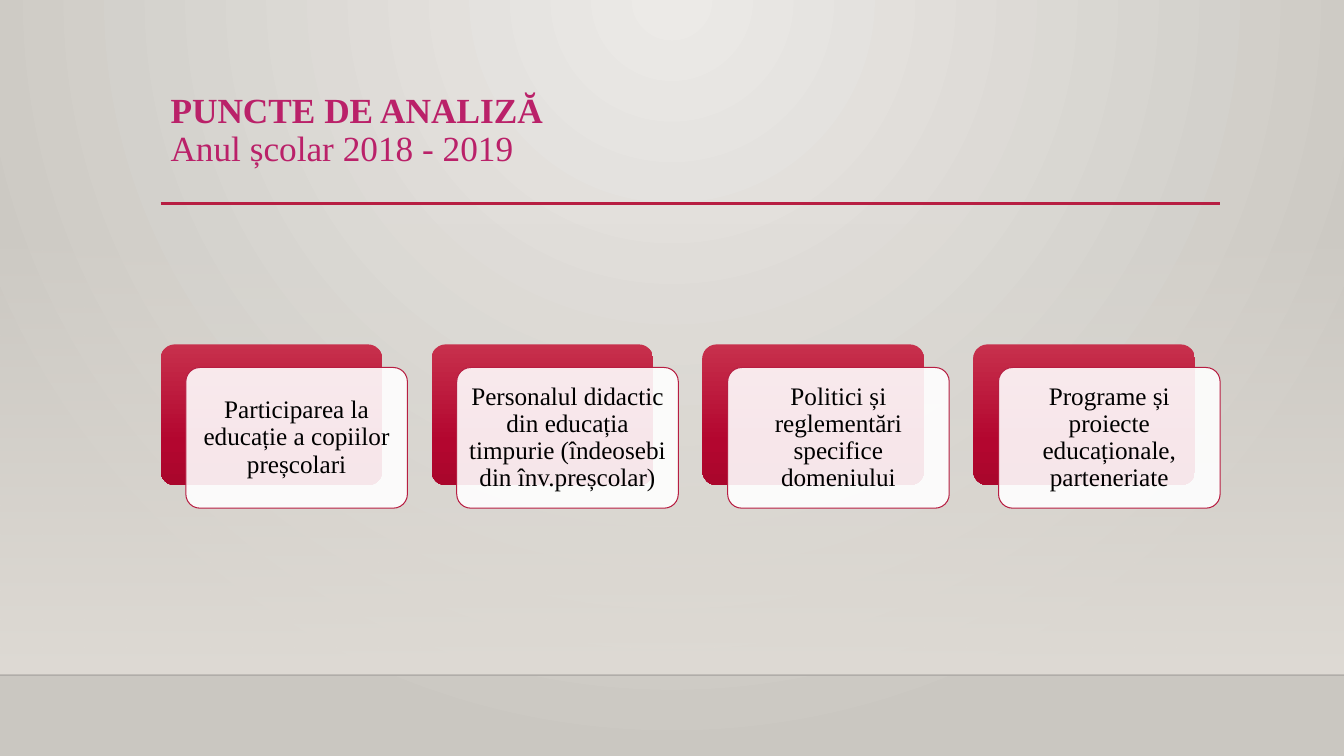
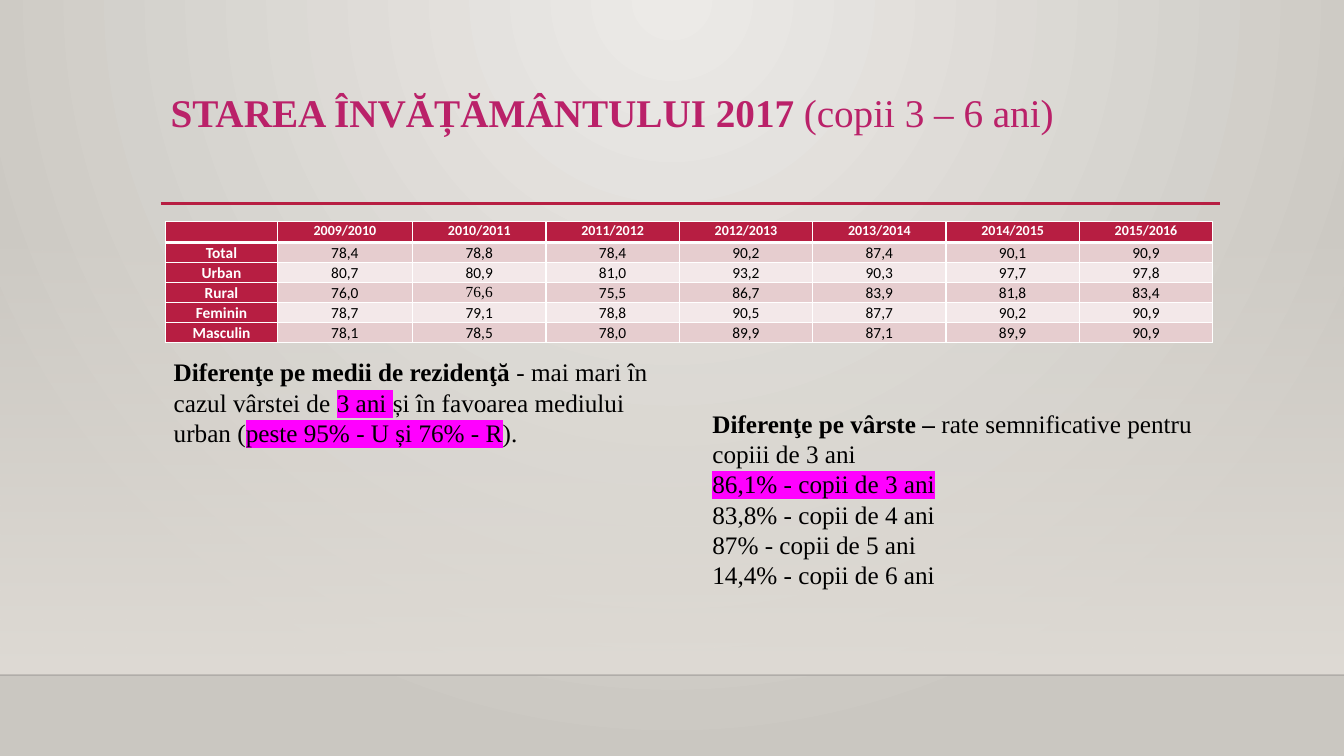
from dataclasses import dataclass

from lxml import etree
from pptx import Presentation
from pptx import util as u
from pptx.dml.color import RGBColor
from pptx.enum import shapes, text
from pptx.oxml.ns import qn

PX = 9525


@dataclass(frozen=True)
class Theme:
    serif: str = "Times New Roman"
    sans: str = "Calibri"
    ink: str = "000000"
    white: str = "FFFFFF"
    head: str = "BA2169"
    red: str = "B71E42"
    edge: str = "000001"
    mark: str = "FF00FF"
    bands: tuple = ("E6CDCF", "F3E8E9")
    back: tuple = ((0, "ECEAE7", 100), (100, "CAC7C1", 100))
    veil: tuple = ((0, "DFDBD5", 0), (100, "DFDBD5", 100))
    card: tuple = ((0, "C7304C", 100), (69, "B3062F", 100), (100, "AA062C", 100))
    body: float = 18
    cell: float = 11
    top: float = 10


T = Theme()
WIDE, HIGH = 1280, 720
LEFT, RIGHT = 153, 1162

POINTS = {
    "size": 25.2,
    "title": [("PUNCTE DE ANALIZĂ\v", "b"), ("Anul școlar 2018 - 2019", "")],
    "cards": [
        "Participarea la educație a copiilor preșcolari",
        "Personalul didactic din educația timpurie (îndeosebi din înv.preșcolar)",
        "Politici și reglementări specifice domeniului",
        "Programe și proiecte educaționale, parteneriate",
    ],
}
STATE = {
    "size": 28,
    "title": [("STAREA ÎNVĂȚĂMÂNTULUI 2017 ", "b"), ("(copii 3 – 6 ani)", "")],
    "rows": [
        ("", "2009/2010", "2010/2011", "2011/2012", "2012/2013", "2013/2014", "2014/2015", "2015/2016"),
        ("Total", "78,4", "78,8", "78,4", "90,2", "87,4", "90,1", "90,9"),
        ("Urban", "80,7", "80,9", "81,0", "93,2", "90,3", "97,7", "97,8"),
        ("Rural", "76,0", "76,6", "75,5", "86,7", "83,9", "81,8", "83,4"),
        ("Feminin", "78,7", "79,1", "78,8", "90,5", "87,7", "90,2", "90,9"),
        ("Masculin", "78,1", "78,5", "78,0", "89,9", "87,1", "89,9", "90,9"),
    ],
    "serif": (3, 2),
    "notes": [
        ((156, 335, 482, 97), [
            [("Diferenţe pe medii de rezidenţă ", "b"), ("- mai mari în cazul vârstei de ", ""),
             ("3 ani ", "m"), ("și în favoarea mediului urban (", ""),
             ("peste 95% - U și 76% - R", "m"), (").", "")],
        ]),
        ((669, 384, 482, 184), [
            [("Diferenţe pe vârste – ", "b"), ("rate semnificative pentru copiii de 3 ani", "")],
            [("86,1% - copii de 3 ani", "m")],
            [("83,8% - copii de 4 ani", "")],
            [("87% - copii de 5 ani", "")],
            [("14,4% - copii de 6 ani", "")],
        ]),
    ],
}


def rgb(hue):
    return RGBColor.from_string(hue)


def sub(node, tag, **attrs):
    return etree.SubElement(node, qn(tag), {k: str(v) for k, v in attrs.items()})


def tint(node, hue, alpha=100):
    clr = sub(node, "a:srgbClr", val=hue)
    if alpha < 100:
        sub(clr, "a:alpha", val=alpha * 1000)


def blend(fill, node, stops, circle=False):
    fill.solid()
    fill.fore_color.rgb = rgb(T.white)
    grad = etree.Element(qn("a:gradFill"), rotWithShape="1")
    group = sub(grad, "a:gsLst")
    for pos, hue, alpha in stops:
        tint(sub(group, "a:gs", pos=pos * 1000), hue, alpha)
    if circle:
        shade = sub(grad, "a:path", path="circle")
        sub(shade, "a:fillToRect", l=43000, t=0, r=43000, b=100000)
    else:
        sub(grad, "a:lin", ang=5400000, scaled=0)
    node.replace(node.find(qn("a:solidFill")), grad)


def write(para, runs, size, hue=T.ink, font=T.serif):
    for words, style in runs:
        part = para.add_run()
        part.text = words.rstrip("\v")
        face = part.font
        face.size, face.name, face.bold = u.Pt(size), font, style == "b"
        face.color.rgb = rgb(hue)
        if style == "m":
            mark = etree.Element(qn("a:highlight"))
            tint(mark, T.mark)
            face.fill._xPr.find(qn("a:solidFill")).addnext(mark)
        if words.endswith("\v"):
            para.add_line_break()


def box(slide, rect):
    frame = slide.shapes.add_textbox(*(v * PX for v in rect)).text_frame
    frame.word_wrap = True
    return frame


def block(slide, kind, rect):
    item = slide.shapes.add_shape(kind, *(v * PX for v in rect))
    item.shadow.inherit = False
    item.line.fill.background()
    return item


def rule(slide, x, end, y, hue, width, alpha=100):
    line = slide.shapes.add_connector(
        shapes.MSO_CONNECTOR.STRAIGHT, x * PX, y * PX, end * PX, y * PX)
    line.line.width = u.Pt(width)
    line.line.color.rgb = rgb(hue)
    props = line._element.spPr
    if alpha < 100:
        sub(props.find(".//" + qn("a:srgbClr")), "a:alpha", val=alpha * 1000)
    sub(props, "a:effectLst")


def base(deck, data):
    slide = deck.slides.add_slide(deck.slide_layouts[6])
    fill = slide.background.fill
    blend(fill, slide.element.find(".//" + qn("p:bgPr")), T.back, True)
    veil = block(slide, shapes.MSO_SHAPE.RECTANGLE, (0, 212, WIDE, 431))
    blend(veil.fill, veil._element.spPr, T.veil)
    rule(slide, 0, WIDE, 643, T.edge, 1, 20)
    rule(slide, LEFT, RIGHT, 194, T.red, 2.5)
    para = box(slide, (LEFT, 84, 1008, 110)).paragraphs[0]
    para.line_spacing = 0.9
    write(para, data["title"], data["size"], T.head)
    return slide


def cards(slide, items):
    wide, high, dx, dy, top = 211, 134, 24, 22, 328
    step = (RIGHT - LEFT - wide - dx) // (len(items) - 1)
    for i, words in enumerate(items):
        x = LEFT + i * step
        rear, front = (
            block(slide, shapes.MSO_SHAPE.ROUNDED_RECTANGLE, (x + a, top + b, wide, high))
            for a, b in ((0, 0), (dx, dy)))
        rear.adjustments[0] = front.adjustments[0] = 0.1
        blend(rear.fill, rear._element.spPr, T.card)
        front.fill.solid()
        front.fill.fore_color.rgb = rgb(T.white)
        sub(front._element.spPr.find(".//" + qn("a:srgbClr")), "a:alpha", val=90000)
        front.line.color.rgb = rgb(T.red)
        front.line.width = u.Pt(0.75)
        frame = front.text_frame
        frame.word_wrap = True
        frame.vertical_anchor = text.MSO_ANCHOR.MIDDLE
        frame.margin_left = frame.margin_right = 7 * PX
        frame.margin_top = frame.margin_bottom = 7 * PX
        para = frame.paragraphs[0]
        para.alignment = text.PP_ALIGN.CENTER
        para.line_spacing = 0.9
        write(para, [(words, "")], T.body)


def border(cell, row):
    props = cell._tc.get_or_add_tcPr()
    thick = {"T": row == 1, "B": row == 0}
    for side in "LRTB":
        width = 3 if thick.get(side) else 1
        line = sub(props, "a:ln" + side, w=width * 12700)
        tint(sub(line, "a:solidFill"), T.white)


def grid(slide, rows, serif):
    cols = [106, 129] + [127] * 6
    highs = [20] + [19] * (len(rows) - 1)
    table = slide.shapes.add_table(
        len(rows), len(cols), 158 * PX, 211 * PX, sum(cols) * PX, sum(highs) * PX).table
    table.horz_banding = False
    for col, wide in zip(table.columns, cols):
        col.width = wide * PX
    for r, row in enumerate(rows):
        table.rows[r].height = highs[r] * PX
        for c, words in enumerate(row):
            cell = table.cell(r, c)
            head = r == 0 or c == 0
            size = T.cell if r else T.top
            border(cell, r)
            cell.fill.solid()
            cell.fill.fore_color.rgb = rgb(T.red if head else T.bands[(r - 1) % 2])
            cell.margin_left = cell.margin_right = 7 * PX
            cell.margin_top = cell.margin_bottom = 0
            para = cell.text_frame.paragraphs[0]
            para.alignment = text.PP_ALIGN.CENTER
            para.line_spacing = 1.07
            if words:
                write(para, [(words, "b" if head else "")], size,
                      T.white if head else T.ink, T.serif if (r, c) == serif else T.sans)
            else:
                sub(para._p, "a:endParaRPr", sz=size * 100)


def notes(slide, items):
    for rect, paras in items:
        frame = box(slide, rect)
        for i, runs in enumerate(paras):
            para = frame.add_paragraph() if i else frame.paragraphs[0]
            write(para, runs, T.body)


def main():
    deck = Presentation()
    deck.slide_width, deck.slide_height = WIDE * PX, HIGH * PX
    cards(base(deck, POINTS), POINTS["cards"])
    slide = base(deck, STATE)
    grid(slide, STATE["rows"], STATE["serif"])
    notes(slide, STATE["notes"])
    deck.save("out.pptx")


if __name__ == "__main__":
    main()
